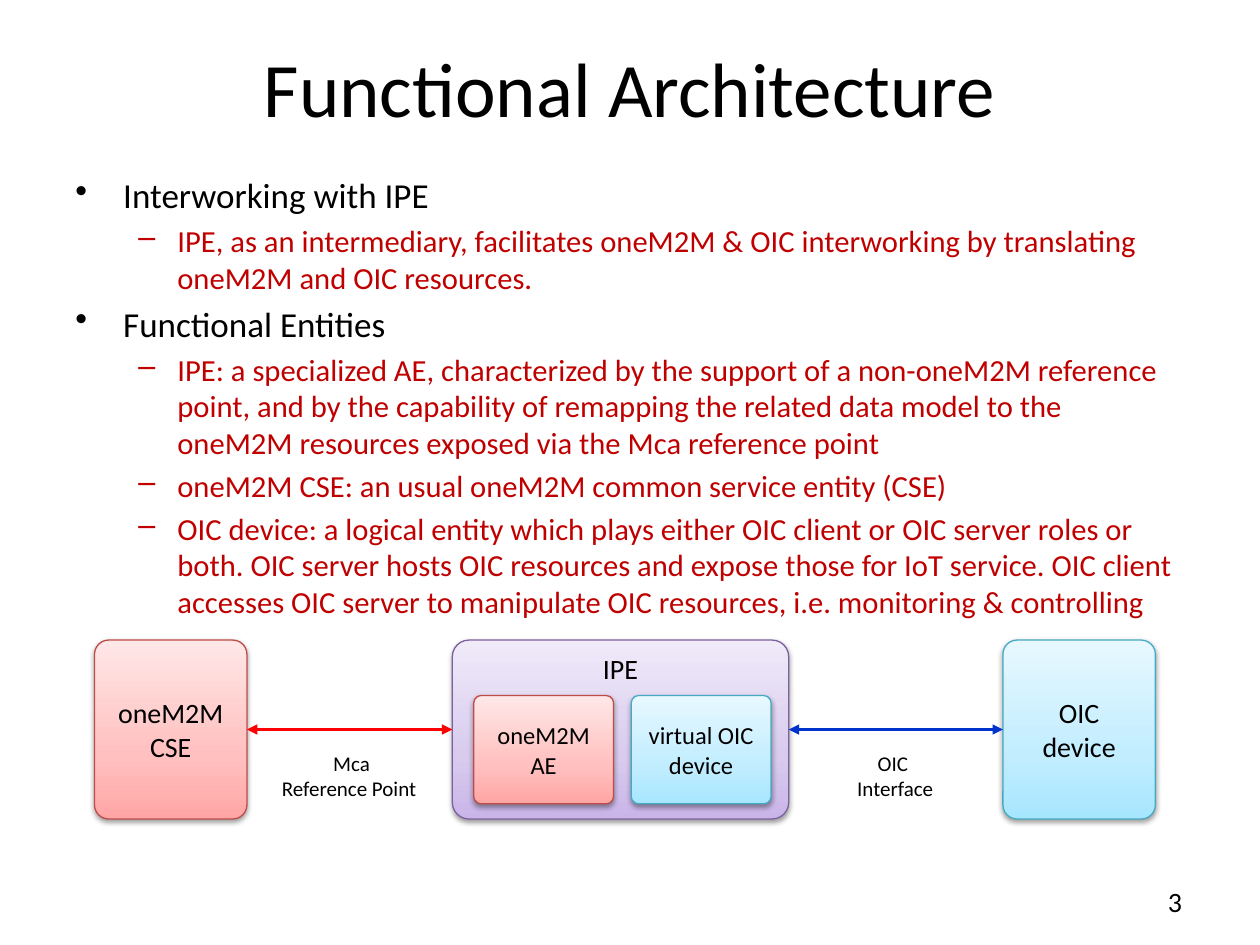
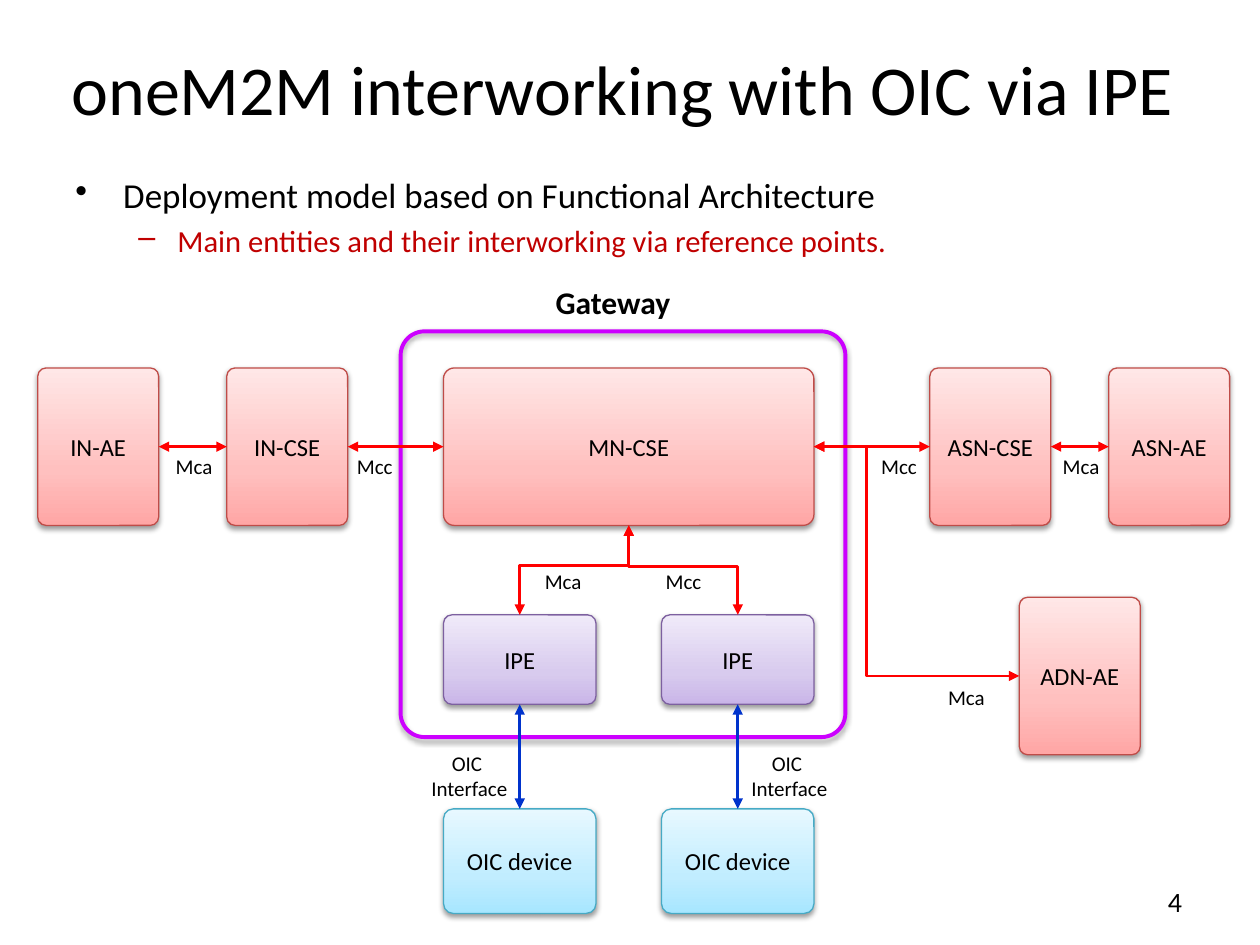
from typing import Any, NamedTuple

from lxml.etree import SubElement
from pptx import Presentation
from pptx.dml.color import RGBColor
from pptx.enum.shapes import MSO_CONNECTOR, MSO_SHAPE
from pptx.enum.text import MSO_ANCHOR, PP_ALIGN
from pptx.oxml.ns import qn
from pptx.util import Inches, Pt

COLOURS = {
    "paper": "FFFFFF", "ink": "000000", "detail": "C00000", "gateway": "CC00FF",
    "oneM2M link": "FF0000", "OIC link": "0033CC",
}
# Outline, then the gradient from bottom to top
ENTITY_COLOURS = {
    "oneM2M": ("BF4C48", "FFA6A5", "FFC0BF", "FFE7E7"),
    "OIC": ("46AAC5", "A7E6FF", "C1EDFF", "E7F8FF"),
    "IPE": ("7D60A0", "C9B5E8", "D8CBEE", "F0EAF9"),
}
GRADIENT_STOPS = (0, 35000, 100000)
FONT = "Calibri"
SLIDE_WIDTH, SLIDE_HEIGHT = Inches(10), Inches(7.5)
COLUMN, ROW = SLIDE_WIDTH / 100, SLIDE_HEIGHT / 75


class Box(NamedTuple):
    """A rectangle in grid columns and rows."""
    left: float
    top: float
    width: float
    height: float

    def side(self, name: str) -> tuple[float, float]:
        across, down = {"left": (0, 0.5), "right": (1, 0.5),
                        "top": (0.5, 0), "bottom": (0.5, 1)}[name]
        return self.left + across * self.width, self.top + down * self.height

    def lengths(self) -> tuple[int, ...]:
        return tuple(round(cells * unit) for cells, unit in zip(self, (COLUMN, ROW) * 2))


class Entity(NamedTuple):
    text: str
    family: str
    box: Box
    size: float = 14
    corner: float = 0.069
    anchor: MSO_ANCHOR = MSO_ANCHOR.MIDDLE


class Label(NamedTuple):
    lines: tuple[str, ...]
    centre: float
    top: float
    width: float = 5


class Link(NamedTuple):
    start: tuple[float, float]
    end: tuple[float, float]
    family: str = "oneM2M"
    bend: float = 0  # share of the way to the first corner; 0 is straight
    upright: bool = False


class Bullet(NamedTuple):
    text: str
    level: int = 0


class BulletStyle(NamedTuple):
    sign: str
    size: float
    colour: str
    margin: float
    hanging: float


BULLET_STYLES = (BulletStyle("•", 20, "ink", 0.38, 0.38),
                 BulletStyle("–", 17.5, "detail", 0.81, 0.31))


def colour(name: str) -> RGBColor:
    return RGBColor.from_string(COLOURS.get(name, name))


def apply(target: Any, formats: dict[str, Any]) -> None:
    for name, value in formats.items():
        setattr(target, name, value)


def add_node(parent: Any, tag: str, **attributes: Any) -> Any:
    return SubElement(parent, qn(f"a:{tag}"), {key: str(value) for key, value in attributes.items()})


# Text

def write_para(frame: Any, index: int, text: str, size: float, ink: str = "ink",
               bold: bool = False, **formats: Any) -> Any:
    para = frame.paragraphs[0] if index == 0 else frame.add_paragraph()
    apply(para, formats)
    span = para.add_run()
    span.text = text
    apply(span.font, {"name": FONT, "size": Pt(size), "bold": bold})
    span.font.color.rgb = colour(ink)
    return para


def add_text(page: Any, box: Box, lines: tuple[str, ...], size: float, wrap: bool = False,
             anchor: MSO_ANCHOR = MSO_ANCHOR.TOP, **formats: Any) -> None:
    frame = page.shapes.add_textbox(*box.lengths()).text_frame
    apply(frame, {"word_wrap": wrap, "vertical_anchor": anchor})
    for index, line in enumerate(lines):
        write_para(frame, index, line, size, **{"alignment": PP_ALIGN.CENTER, **formats})


def add_label(page: Any, label: Label) -> None:
    box = Box(label.centre - label.width / 2, label.top, label.width, 1 + 2 * len(label.lines))
    add_text(page, box, label.lines, 12)


def add_bullets(page: Any, bullets: tuple[Bullet, ...], rows: float) -> None:
    frame = page.shapes.add_textbox(*Box(5, 13.3, 90, rows).lengths()).text_frame
    frame.word_wrap = True
    for index, bullet in enumerate(bullets):
        style = BULLET_STYLES[bullet.level]
        para = write_para(frame, index, bullet.text, style.size, style.colour,
                          level=bullet.level, space_before=Pt(0.2 * style.size))
        properties = para._p.get_or_add_pPr()
        properties.set("marL", str(Inches(style.margin)))
        properties.set("indent", str(-Inches(style.hanging)))
        add_node(properties, "buChar", char=style.sign)


# Shapes

def add_rounded(page: Any, box: Box, corner: float, outline: str, width: float,
                gradient: tuple[str, ...] = ()) -> Any:
    shape = page.shapes.add_shape(MSO_SHAPE.ROUNDED_RECTANGLE, *box.lengths())
    shape.adjustments[0] = corner
    properties = shape._element.spPr
    if gradient:
        fill = add_node(properties, "gradFill", rotWithShape=1)
        stops = add_node(fill, "gsLst")
        for position, tint in zip(GRADIENT_STOPS, gradient):
            add_node(add_node(stops, "gs", pos=position), "srgbClr", val=tint)
        add_node(fill, "lin", ang=270 * 60000, scaled=1)
    else:
        shape.fill.background()
    shape.line.color.rgb = colour(outline)
    shape.line.width = Pt(width)
    # Soft shadow just below the shape
    shadow = add_node(add_node(properties, "effectLst"), "outerShdw", blurRad=Pt(3.1),
                      dist=Pt(1.6), dir=90 * 60000, rotWithShape=0)
    add_node(add_node(shadow, "srgbClr", val=COLOURS["ink"]), "alpha", val=38000)
    return shape


def add_entity(page: Any, entity: Entity) -> None:
    outline, *gradient = ENTITY_COLOURS[entity.family]
    shape = add_rounded(page, entity.box, entity.corner, outline, 0.75, tuple(gradient))
    apply(shape.text_frame, {"word_wrap": True, "vertical_anchor": entity.anchor})
    write_para(shape.text_frame, 0, entity.text, entity.size, alignment=PP_ALIGN.CENTER)


def add_link(page: Any, link: Link) -> None:
    (x1, y1), (x2, y2) = link.start, link.end
    turn = 0
    if link.upright:
        # A quarter turn makes the elbow leave its start vertically
        turn = 90 if x2 < x1 else 270
        across, down = (x1 + x2) / 2, (y1 + y2) / 2
        reach, drop = (y2 - y1) / 2, abs(x2 - x1) / 2
        if turn == 270:
            reach = -reach
        x1, y1, x2, y2 = across - reach, down - drop, across + reach, down + drop
    kind = MSO_CONNECTOR.ELBOW if link.bend else MSO_CONNECTOR.STRAIGHT
    connector = page.shapes.add_connector(
        kind, round(x1 * COLUMN), round(y1 * ROW), round(x2 * COLUMN), round(y2 * ROW))
    connector.line.color.rgb = colour(f"{link.family} link")
    connector.line.width = Pt(1.5)
    properties = connector._element.spPr
    if turn:
        properties.find(qn("a:xfrm")).set("rot", str(turn * 60000))
    if link.bend:
        guides = properties.find(qn("a:prstGeom")).get_or_add_avLst()
        add_node(guides, "gd", name="adj1", fmla=f"val {round(link.bend * 100000)}")
    for end in ("headEnd", "tailEnd"):
        add_node(properties.find(qn("a:ln")), end, type="triangle")
    add_node(properties, "effectLst")


# Slides

def add_page(deck: Any, number: int, title: str, title_size: float, title_width: float) -> Any:
    page = deck.slides.add_slide(deck.slide_layouts[6])
    page.background.fill.solid()
    page.background.fill.fore_color.rgb = colour("paper")
    add_text(page, Box(90.2, 69.7, 4.6, 3.7), (str(number),), 16, alignment=PP_ALIGN.RIGHT)
    add_text(page, Box(50 - title_width / 2, 3.3, title_width, 8.3), (title,), title_size,
             wrap=True, anchor=MSO_ANCHOR.MIDDLE, line_spacing=0.85)
    return page


def draw_parts(page: Any, entities: tuple[Entity, ...], links: tuple[Link, ...],
               labels: tuple[Label, ...]) -> None:
    for add_part, parts in ((add_entity, entities), (add_link, links), (add_label, labels)):
        for part in parts:
            add_part(page, part)


def build_architecture(deck: Any) -> None:
    page = add_page(deck, 3, "Functional Architecture", 44, 79.2)
    add_bullets(page, (
        Bullet("Interworking with IPE"),
        Bullet("IPE, as an intermediary, facilitates oneM2M & OIC interworking by translating "
               "oneM2M and OIC resources.", 1),
        Bullet("Functional Entities"),
        Bullet("IPE: a specialized AE, characterized by the support of a non-oneM2M reference "
               "point, and by the capability of remapping the related data model to the "
               "oneM2M resources exposed via the Mca reference point", 1),
        Bullet("oneM2M CSE: an usual oneM2M common service entity (CSE)", 1),
        Bullet("OIC device: a logical entity which plays either OIC client or OIC server roles "
               "or both. OIC server hosts OIC resources and expose those for IoT service. OIC "
               "client accesses OIC server to manipulate OIC resources, i.e. monitoring & "
               "controlling", 1),
    ), 34.2)
    cse, ipe, device = (Box(left, 50.8, width, 14.2)
                        for left, width in ((7.5, 12.1), (35.9, 26.7), (79.6, 12.1)))
    agent, virtual = (Box(left, 55.2, 11.1, 8.6) for left in (37.6, 50.1))
    draw_parts(page, (
        Entity("OIC device", "OIC", device, 16, 0.093),
        Entity("oneM2M CSE", "oneM2M", cse, 16, 0.093),
        Entity("IPE", "IPE", ipe, 16, 0.093, MSO_ANCHOR.TOP),
        Entity("oneM2M AE", "oneM2M", agent),
        Entity("virtual OIC device", "OIC", virtual),
    ), (
        Link(ipe.side("right"), device.side("left"), "OIC"),
        Link(cse.side("right"), ipe.side("left")),
    ), (
        Label(("Mca", "Reference Point "), 27.9, 59.1, 13.2),
        Label(("OIC ", "Interface"), 71.05, 59.1, 8.1),
    ))


def build_deployment(deck: Any) -> None:
    page = add_page(deck, 4, "oneM2M interworking with OIC via IPE ", 40, 95)
    add_bullets(page, (
        Bullet("Deployment model based on Functional Architecture"),
        Bullet("Main entities and their interworking via reference points.", 1),
    ), 6.9)

    # Nodes in one row, with the gateway's stacks below
    in_ae, in_cse, asn_cse, asn_ae = (Box(left, 29.2, 9.6, 12.5) for left in (3, 18, 73.8, 88))
    adn_ae = Box(80.9, 47.4, 9.6, 12.5)
    mn_cse = Box(35.2, 29.2, 29.4, 12.5)
    stacks = tuple((Box(left, 48.8, 12.1, 7.1), Box(left, 64.2, 12.1, 8.3))
                   for left in (35.2, 52.5))
    nodes = {"IN-AE": in_ae, "IN-CSE": in_cse, "MN-CSE": mn_cse, "ASN-CSE": asn_cse,
             "ASN-AE": asn_ae, "ADN-AE": adn_ae}
    entities = [Entity(name, "oneM2M", box) for name, box in nodes.items()]
    row = (in_ae, in_cse, mn_cse, asn_cse, asn_ae)
    links = [Link(one.side("right"), other.side("left")) for one, other in zip(row, row[1:])]
    links.append(Link(mn_cse.side("right"), adn_ae.side("left"), bend=0.256))
    for (ipe, device), bend in zip(stacks, (0.449, 0.462)):
        entities += [Entity("IPE", "IPE", ipe, corner=0.093),
                     Entity("OIC device", "OIC", device, corner=0.093)]
        links += [Link(mn_cse.side("bottom"), ipe.side("top"), bend=bend, upright=True),
                  Link(ipe.side("bottom"), device.side("top"), "OIC")]
    labels = [Label((text,), centre, top) for text, centre, top in (
        ("Mca", 15.4, 35.5), ("Mcc", 29.75, 35.5), ("Mcc", 71.35, 35.5), ("Mca", 85.8, 35.5),
        ("Mca", 44.7, 44.6), ("Mcc", 54.25, 44.6), ("Mca", 76.7, 53.8))]
    labels += [Label(("OIC ", "Interface"), centre, 59.1, 8.1) for centre in (37.25, 62.65)]

    add_rounded(page, Box(31.8, 26.3, 35.3, 32.2), 0.059, "gateway", 2.25)
    add_text(page, Box(42.5, 20.9, 12.3, 6.1), ("Gateway",), 18, wrap=True,
             anchor=MSO_ANCHOR.MIDDLE, bold=True)
    draw_parts(page, tuple(entities), tuple(links), tuple(labels))


def main() -> None:
    deck = Presentation()
    apply(deck, {"slide_width": SLIDE_WIDTH, "slide_height": SLIDE_HEIGHT})
    build_architecture(deck)
    build_deployment(deck)
    deck.save("out.pptx")


if __name__ == "__main__":
    main()
